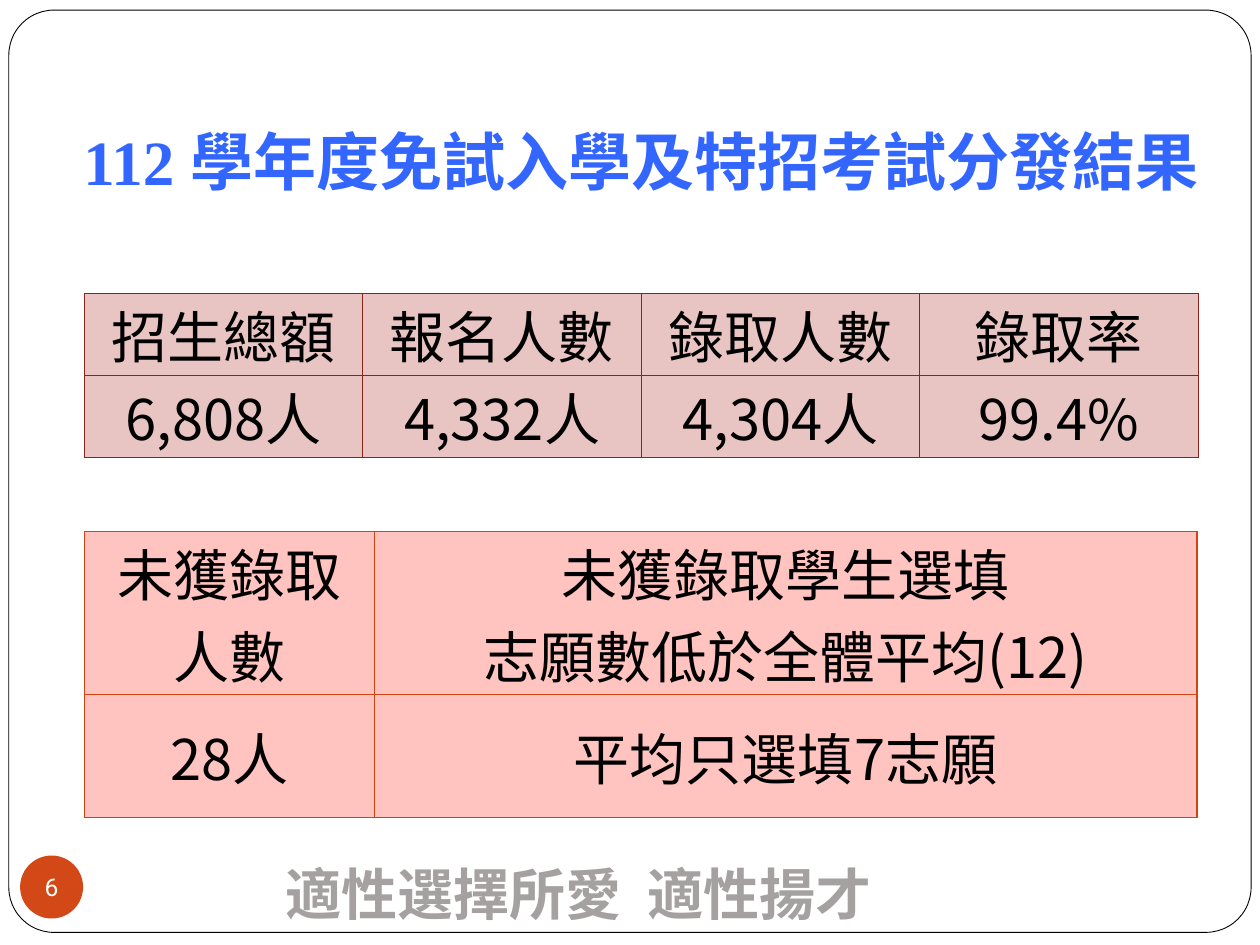
from lxml import etree
from pptx import Presentation
from pptx.dml.color import RGBColor
from pptx.enum.shapes import MSO_SHAPE
from pptx.enum.text import MSO_ANCHOR, PP_ALIGN
from pptx.oxml import parse_xml
from pptx.oxml.ns import nsdecls, qn
from pptx.util import Inches, Pt

CENTER = PP_ALIGN.CENTER
MIDDLE = MSO_ANCHOR.MIDDLE
TOP = MSO_ANCHOR.TOP
ROUNDED = MSO_SHAPE.ROUNDED_RECTANGLE
OVAL = MSO_SHAPE.OVAL
CJK = "Noto Sans CJK SC"
COLORS = {
    "white": "FFFFFF", "black": "000000", "title": "3366FF",
    "slogan": "A6A1A1", "badge": "D34817",
    "result_fill": "E8C5C2", "result_line": "8C2518",
    "missed_fill": "FFC4BF", "missed_line": "D34412",
}


def rgb(name):
    return RGBColor.from_string(COLORS[name])


def write(tf, text, size, color, font=CJK, bold=False, align=CENTER):
    tf.text = text
    for p in tf.paragraphs:
        p.alignment = align
        p.font.size, p.font.bold, p.font.name = Pt(size), bold, font
        p.font.color.rgb = rgb(color)
        props = p._p.pPr.find(qn("a:defRPr"))
        props.find(qn("a:latin")).addnext(
            parse_xml(f'<a:ea {nsdecls("a")} typeface="{CJK}"/>'))


prs = Presentation()
prs.slide_width, prs.slide_height = Inches(10), Inches(7.5)
s = prs.slides.add_slide(prs.slide_layouts[5])

frame = s.shapes.add_shape(ROUNDED, Inches(0.07), Inches(0.08), Inches(9.86), Inches(7.32))
frame.adjustments[0] = 0.049
frame.shadow.inherit = False
frame.fill.solid()
frame.fill.fore_color.rgb = rgb("white")
frame.line.color.rgb = rgb("black")
frame.line.width = Pt(0.5)
s.shapes._spTree.insert(2, frame._element)

title = s.shapes.title
title.left, title.top, title.width, title.height = map(Inches, (0.28, 0.6, 9.61, 1.34))
title.text_frame.vertical_anchor = MIDDLE
write(title.text_frame, "112 學年度免試入學及特招考試分發結果", 36, "title", "Times New Roman", True)
title_props = title.text_frame.paragraphs[0]._p.pPr.find(qn("a:defRPr"))
title_props.find(qn("a:solidFill")).addnext(parse_xml(
    f'<a:effectLst {nsdecls("a")}><a:outerShdw blurRad="38100" dist="38100" dir="2700000">'
    '<a:srgbClr val="C0C0C0"/></a:outerShdw></a:effectLst>'))

tables = [
    ("result", 2.33, [2.21] * 4, [0.65, 0.65], TOP,
     [["招生總額", "報名人數", "錄取人數", "錄取率"],
      ["6,808人", "4,332人", "4,304人", "99.4%"]]),
    ("missed", 4.22, [2.3, 6.53], [1.29, 0.98], MIDDLE,
     [["未獲錄取\n人數", "未獲錄取學生選填\n志願數低於全體平均(12)"],
      ["28人", "平均只選填7志願"]]),
]
for name, top, widths, heights, anchor, rows in tables:
    table = s.shapes.add_table(len(heights), len(widths), Inches(0.67), Inches(top),
                               Inches(sum(widths)), Inches(sum(heights))).table
    for column, width in zip(table.columns, widths):
        column.width = Inches(width)
    for row, height, texts in zip(table.rows, heights, rows):
        row.height = Inches(height)
        for cell, text in zip(row.cells, texts):
            cell.margin_left = cell.margin_right = Inches(0.07)
            cell.margin_top = cell.margin_bottom = 0
            cell.vertical_anchor = anchor
            write(cell.text_frame, text, 32, "black")
            cell.fill.solid()
            cell.fill.fore_color.rgb = rgb(f"{name}_fill")
            tc_pr = cell._tc.get_or_add_tcPr()
            for i, side in enumerate(("lnL", "lnR", "lnT", "lnB")):
                ln = etree.Element(qn(f"a:{side}"), w=str(Pt(0.75)))
                fill = etree.SubElement(ln, qn("a:solidFill"))
                etree.SubElement(fill, qn("a:srgbClr"), val=COLORS[f"{name}_line"])
                tc_pr.insert(i, ln)

slogan = s.shapes.add_textbox(Inches(2.17), Inches(6.77), Inches(5.57), Inches(0.64))
slogan.text_frame.word_wrap = True
write(slogan.text_frame, "適性選擇所愛  適性揚才", 32, "slogan", bold=True, align=PP_ALIGN.LEFT)

badge = s.shapes.add_shape(OVAL, Inches(0.16), Inches(6.79), Inches(0.5), Inches(0.5))
badge.shadow.inherit = False
badge.fill.solid()
badge.fill.fore_color.rgb = rgb("badge")
badge.line.fill.background()
tf = badge.text_frame
tf.margin_left = tf.margin_right = tf.margin_top = tf.margin_bottom = 0
tf.word_wrap = False
tf.vertical_anchor = MIDDLE
write(tf, "6", 14, "white", "Roboto")

prs.save("out.pptx")
